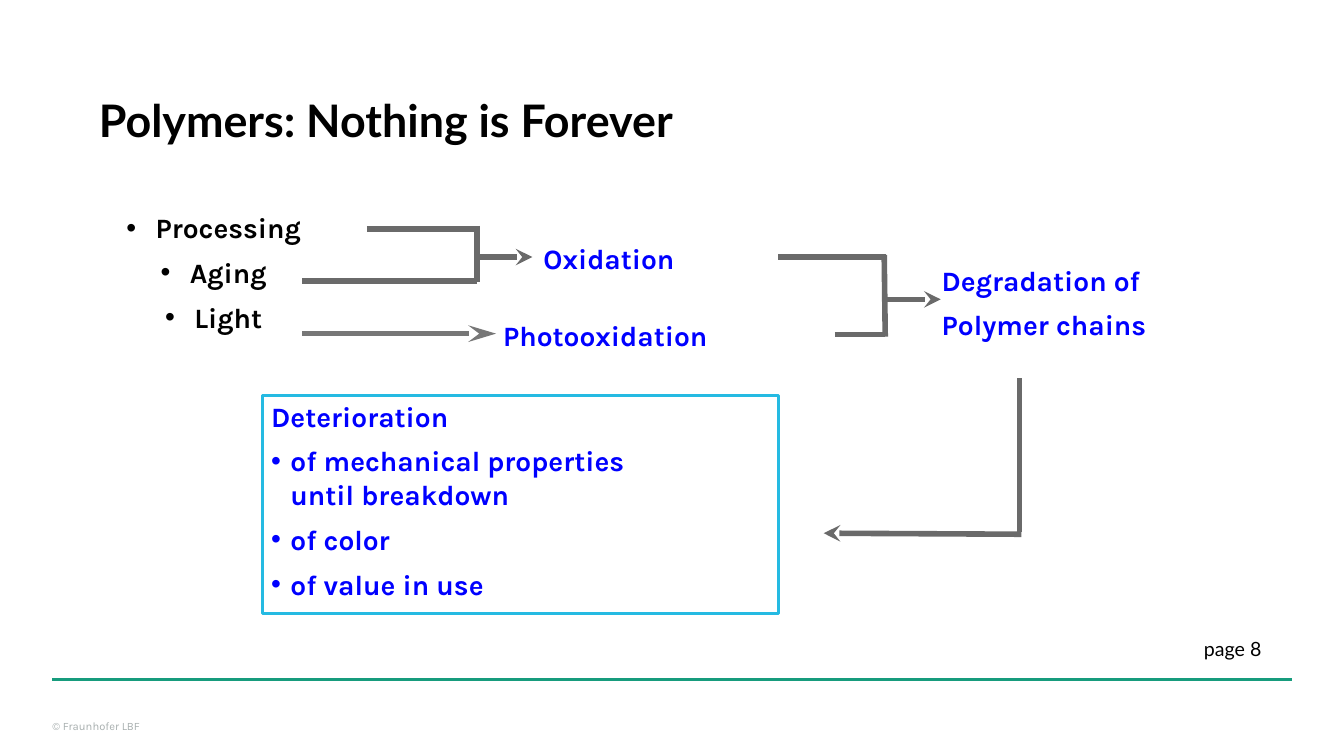
from lxml import etree
from pptx import Presentation
from pptx.dml.color import RGBColor as RGB
from pptx.enum.shapes import MSO_CONNECTOR as Conn, MSO_SHAPE as Shape
from pptx.enum.text import MSO_ANCHOR as Anchor, PP_ALIGN as Align
from pptx.oxml.ns import qn
from pptx.util import Inches, Pt

COLORS = {
    "black": "000000", "blue": "0000FF", "cyan": "25BAE2", "green": "179C7D",
    "gray": "6A6A6A", "light": "777777", "pale": "A8AFAF",
}

# Labels: left, top, width, height, lines, font, size, bold, colour
LABELS = [
    (0.89, 0.88, 6.22, 0.62, ["Polymers: Nothing is Forever"], "Lato", 32, True, "black"),
    (5.3, 2.36, 1.61, 0.42, ["Oxidation"], "Karla", 20, True, "blue"),
    (4.9, 3.12, 2.44, 0.42, ["Photooxidation"], "Karla", 20, True, "blue"),
    (9.25, 2.57, 2.48, 0.89, ["Degradation of", "Polymer chains"], "Karla", 20, True, "blue"),
]
# Footer texts, set without margins
FOOTER = [
    (0.52, 7.14, 1.97, 0.14, ["© Fraunhofer LBF"], "Karla", 8, False, "pale"),
    (11.94, 6.32, 0.81, 0.24, ["page 8"], "Lato", 14, False, "black"),
]
CAUSES = ["Processing", "Aging", "Light"]
EFFECTS = [
    "Deterioration", "of mechanical properties\nuntil breakdown",
    "of color", "of value in use",
]
# Lines: from x, y, to x, y, colour, width, arrowhead length
LINES = [
    (0.52, 6.74, 12.81, 6.74, "green", 2.5, None),
    # causes to oxidation
    (3.64, 2.27, 4.73, 2.27, "gray", 4, None),
    (3, 2.79, 4.73, 2.79, "gray", 4, None),
    (4.73, 2.24, 4.73, 2.8, "gray", 4, None),
    (4.73, 2.55, 5.28, 2.55, "gray", 4, "med"),
    # light to photooxidation
    (3, 3.31, 4.92, 3.31, "light", 4, "lg"),
    # both to degradation
    (7.72, 2.55, 8.79, 2.55, "gray", 4, None),
    (8.28, 3.32, 8.78, 3.32, "gray", 4, None),
    (8.77, 2.53, 8.78, 3.34, "gray", 4, None),
    (8.78, 2.97, 9.33, 2.97, "gray", 4, "med"),
    # degradation to deterioration
    (10.11, 3.75, 10.11, 5.28, "gray", 4, None),
    (10.13, 5.3, 8.17, 5.29, "gray", 4, "med"),
]


def color(name):
    return RGB.from_string(COLORS[name])


def indent(para, size, bullet):
    props = para._p.get_or_add_pPr()
    props.set("marL", str(Inches(size)))
    props.set("indent", str(-Inches(size)))
    if bullet:
        font = etree.SubElement(props, qn("a:buFont"))
        font.set("typeface", "Arial")
        etree.SubElement(props, qn("a:buChar")).set("char", "•")


def write(shape, lines, face, size, bold, tint, pad=True, hang=0, first=0, align=Align.LEFT):
    """Fill a shape; lines from index first on get bullets when hang is set."""
    frame = shape.text_frame
    frame.word_wrap = True
    frame.vertical_anchor = Anchor.TOP
    frame.margin_left = frame.margin_right = Inches(0.09 if pad else 0)
    frame.margin_top = frame.margin_bottom = Inches(0.04 if pad else 0)
    for i, line in enumerate(lines):
        para = frame.paragraphs[0] if i == 0 else frame.add_paragraph()
        if hang:
            indent(para, hang, i >= first)
        para.alignment = align
        para.space_after = Pt(size * 0.4)
        for j, part in enumerate(line.split("\n")):
            if j:
                para.add_line_break()
            run = para.add_run()
            run.text = part
            font = run.font
            font.name, font.size, font.bold = face, Pt(size), bold
            font.color.rgb = color(tint)


def connect(slide, x1, y1, x2, y2, tint, width, head):
    line = slide.shapes.add_connector(Conn.STRAIGHT, *map(Inches, (x1, y1, x2, y2)))
    line.line.color.rgb = color(tint)
    line.line.width = Pt(width)
    props = line._element.spPr
    if head:
        tail = etree.SubElement(props.find(qn("a:ln")), qn("a:tailEnd"))
        for key, val in (("type", "stealth"), ("w", "med"), ("len", head)):
            tail.set(key, val)
    etree.SubElement(props, qn("a:effectLst"))


def main():
    deck = Presentation()
    deck.slide_width, deck.slide_height = Inches(13.33), Inches(7.5)
    slide = deck.slides.add_slide(deck.slide_layouts[6])
    shapes = slide.shapes

    # Title, labels and footer
    for group, pad in ((LABELS, True), (FOOTER, False)):
        for *place, lines, face, size, bold, tint in group:
            box = shapes.add_textbox(*map(Inches, place))
            write(box, lines, face, size, bold, tint, pad)

    # Causes
    box = shapes.add_textbox(*map(Inches, (1.05, 2.05, 2.14, 1.37)))
    write(box, CAUSES, "Karla", 20, True, "black", hang=0.29, align=Align.CENTER)

    # Effects
    box = shapes.add_shape(Shape.RECTANGLE, *map(Inches, (2.6, 3.92, 5.12, 2.17)))
    box.shadow.inherit = False
    box.fill.background()
    box.line.color.rgb = color("cyan")
    box.line.width = Pt(2)
    write(box, EFFECTS, "Karla", 20, True, "blue", hang=0.19, first=1)

    # Lines and arrows
    for item in LINES:
        connect(slide, *item)

    deck.save("out.pptx")


if __name__ == "__main__":
    main()
